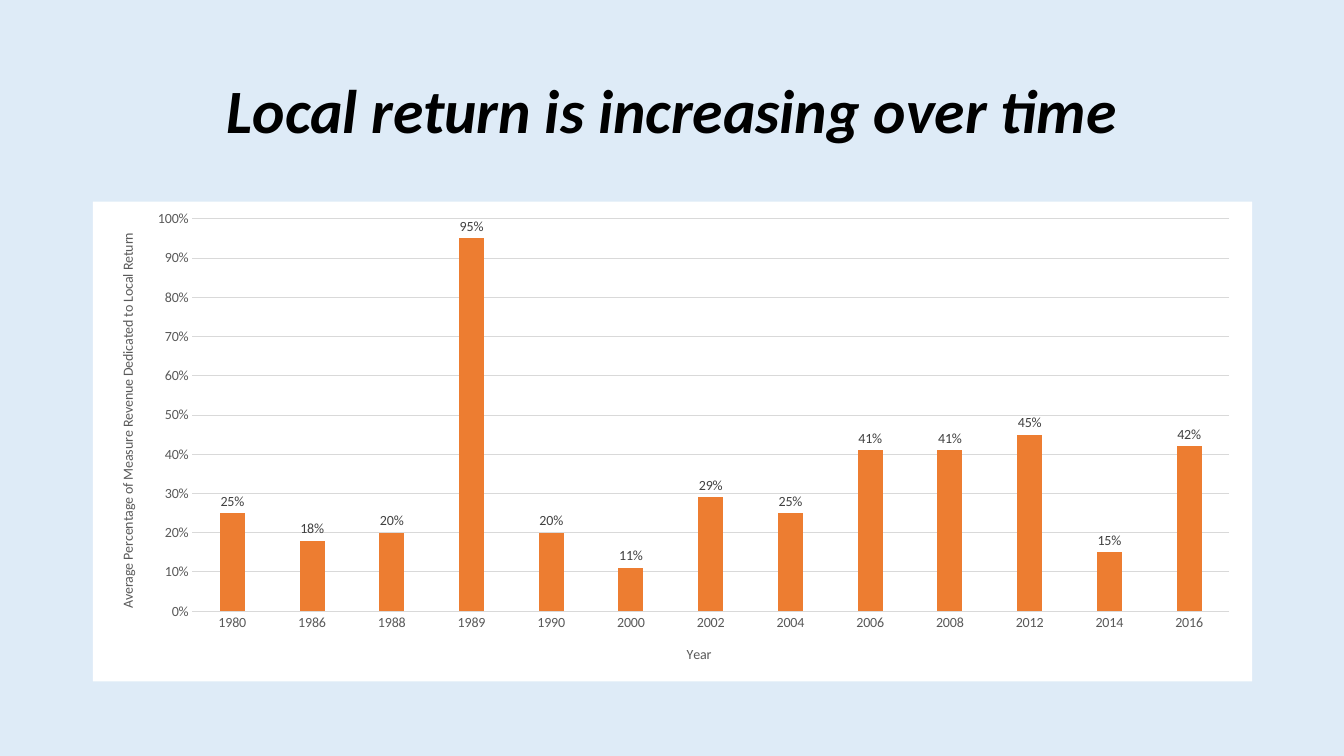
from dataclasses import dataclass

from lxml import etree
from pptx import Presentation
from pptx import util as u
from pptx.chart.data import CategoryChartData
from pptx.dml.color import RGBColor
from pptx.enum import chart as ch
from pptx.enum import text
from pptx.oxml import parse_xml
from pptx.oxml.ns import nsdecls, qn

PX = 9144  # EMU in one px, 100 px to the inch
FONT = "Calibri"
GREY, GRID = "595959", "D9D9D9"


@dataclass(frozen=True)
class Box:
    left: int
    top: int
    width: int
    height: int

    def emu(self) -> list[u.Emu]:
        return [px(n) for n in (self.left, self.top, self.width, self.height)]


@dataclass(frozen=True)
class AxisTitle:
    wording: str
    x: float  # share of the chart's width
    y: float  # share of the chart's height


TITLE_BOX = Box(92, 40, 1150, 145)
CHART_BOX = Box(92, 200, 1150, 476)
YEAR_TITLE = AxisTitle("Year", 0.51, 0.92)
SHARE_TITLE = AxisTitle(
    "Average Percentage of Measure Revenue Dedicated to Local Return", 0.02, 0.06)
RETURNS = {
    "1980": 0.25, "1986": 0.18, "1988": 0.2, "1989": 0.95, "1990": 0.2,
    "2000": 0.11, "2002": 0.29, "2004": 0.25, "2006": 0.41, "2008": 0.41,
    "2012": 0.45, "2014": 0.15, "2016": 0.42,
}


def px(count: int) -> u.Emu:
    return u.Emu(count * PX)


def colour(value: str) -> RGBColor:
    return RGBColor.from_string(value)


def style_font(font, size: int, value: str) -> None:
    font.name, font.size = FONT, u.Pt(size)
    font.color.rgb = colour(value)


def style_line(line, value: str) -> None:
    line.color.rgb = colour(value)
    line.width = u.Pt(0.75)


def place(element, index: int, **shares: float) -> None:
    """Give a chart part a fixed layout in shares of the chart's size."""
    for old in element.findall(qn("c:layout")):
        element.remove(old)
    layout = parse_xml(f"<c:layout {nsdecls('c')}><c:manualLayout/></c:layout>")
    settings = {"xMode": "edge", "yMode": "edge", **shares}
    if "w" in shares:
        settings = {"layoutTarget": "inner", **settings}
    for name, value in settings.items():
        etree.SubElement(layout[0], qn(f"c:{name}")).set("val", str(value))
    element.insert(index, layout)


def style_axis(axis, title: AxisTitle) -> None:
    axis.major_tick_mark = axis.minor_tick_mark = ch.XL_TICK_MARK.NONE
    style_font(axis.tick_labels.font, 10, GREY)
    para = axis.axis_title.text_frame.paragraphs[0]
    span = para.add_run()
    span.text = title.wording
    style_font(span.font, 10, GREY)
    span.font.bold = False
    place(axis.axis_title._element, 1, x=title.x, y=title.y)


def add_title(page) -> None:
    box = page.shapes.add_textbox(*TITLE_BOX.emu())
    frame = box.text_frame
    frame.word_wrap = True
    frame.vertical_anchor = text.MSO_ANCHOR.MIDDLE
    para = frame.paragraphs[0]
    para.alignment = text.PP_ALIGN.CENTER
    para.line_spacing = 0.9
    span = para.add_run()
    span.text = "Local return is increasing over time"
    style_font(span.font, 44, "000000")
    span.font.bold = span.font.italic = True


def add_return_chart(page) -> None:
    data = CategoryChartData(number_format="0%")
    data.categories = list(RETURNS)
    data.add_series("Series 1", list(RETURNS.values()))
    chart = page.shapes.add_chart(
        ch.XL_CHART_TYPE.COLUMN_CLUSTERED, *CHART_BOX.emu(), data).chart
    chart.has_title = chart.has_legend = False
    style_font(chart.font, 10, "000000")

    # White chart area without a border
    chart._chartSpace.find(qn("c:chart")).addnext(parse_xml(
        f"<c:spPr {nsdecls('c', 'a')}><a:solidFill><a:srgbClr val='FFFFFF'/>"
        "</a:solidFill><a:ln><a:noFill/></a:ln></c:spPr>"))

    # Axes
    years, shares = chart.category_axis, chart.value_axis
    style_axis(years, YEAR_TITLE)
    style_axis(shares, SHARE_TITLE)
    style_line(years.format.line, GRID)
    shares.format.line.fill.background()
    shares.has_major_gridlines = True
    style_line(shares.major_gridlines.format.line, GRID)
    shares.minimum_scale, shares.maximum_scale, shares.major_unit = 0, 1, 0.1
    shares.tick_labels.number_format = "0%"
    shares.tick_labels.number_format_is_linked = False
    plot_area = chart._chartSpace.find(".//" + qn("c:plotArea"))
    place(plot_area, 0, x=0.086, y=0.036, w=0.894, h=0.818)

    # Columns and their labels
    plot = chart.plots[0]
    plot.gap_width, plot.overlap = 219, -27
    plot.vary_by_categories = False
    series = plot.series[0]
    series.format.fill.solid()
    series.format.fill.fore_color.rgb = colour("ED7D31")
    labels = series.data_labels
    labels.show_value = True
    labels.position = ch.XL_LABEL_POSITION.OUTSIDE_END
    labels.number_format, labels.number_format_is_linked = "0%", False
    style_font(labels.font, 10, "404040")


def main() -> None:
    deck = Presentation()
    deck.slide_width, deck.slide_height = px(1333), px(750)
    page = deck.slides.add_slide(deck.slide_layouts[6])
    page.background.fill.solid()
    page.background.fill.fore_color.rgb = colour("DEEBF7")
    add_title(page)
    add_return_chart(page)
    deck.save("out.pptx")


if __name__ == "__main__":
    main()
